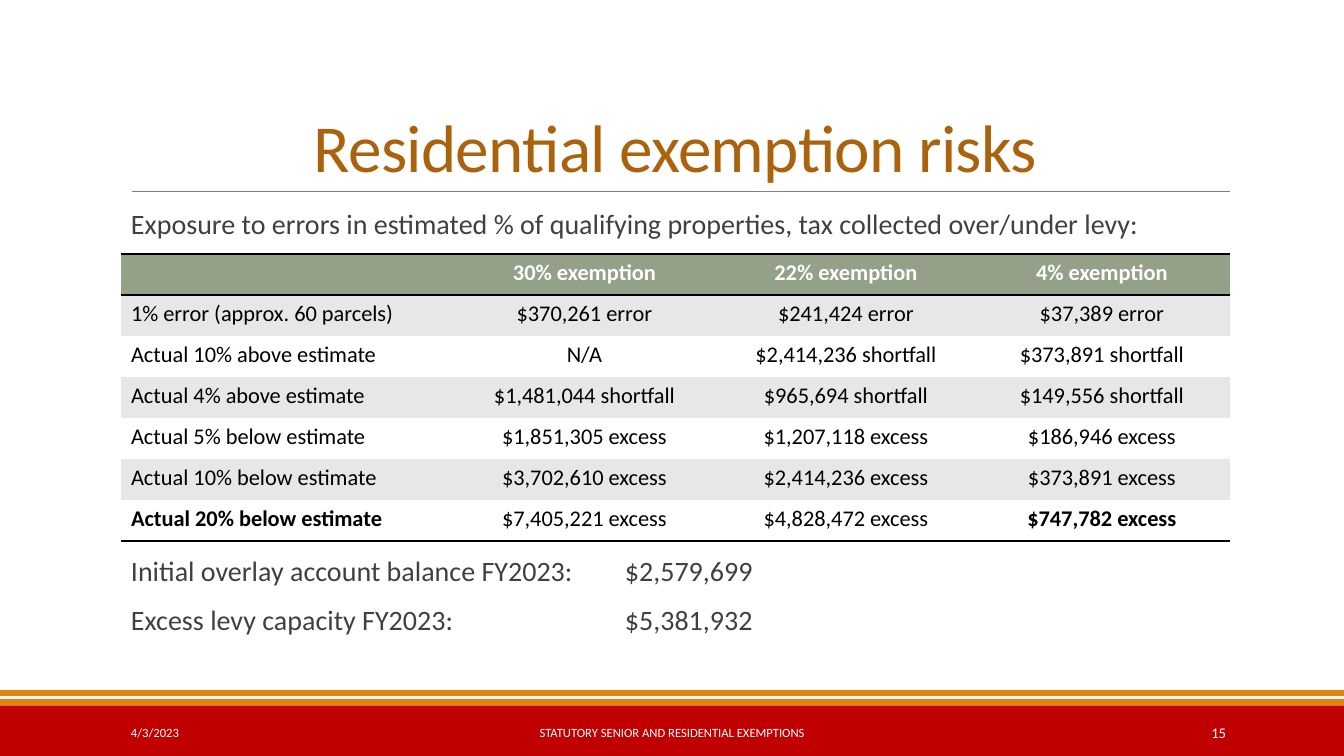
from dataclasses import dataclass

from lxml import etree
from pptx import Presentation
from pptx.dml.color import RGBColor
from pptx.enum.shapes import MSO_CONNECTOR, MSO_SHAPE
from pptx.enum.text import MSO_ANCHOR, PP_ALIGN
from pptx.oxml.ns import qn
from pptx.util import Pt

LEFT, CENTER, RIGHT = PP_ALIGN.LEFT, PP_ALIGN.CENTER, PP_ALIGN.RIGHT
MIDDLE, BOTTOM = MSO_ANCHOR.MIDDLE, MSO_ANCHOR.BOTTOM
RECTANGLE, STRAIGHT = MSO_SHAPE.RECTANGLE, MSO_CONNECTOR.STRAIGHT
EMU_PER_PX = 914400 / 100.8
PAGE_WIDTH, PAGE_HEIGHT = 1344, 756
PLAIN_TABLE_STYLE = "{2D5ABB26-0587-4C30-8999-92F81FD0307C}"


@dataclass(frozen=True)
class Theme:
    font: str = "Calibri"
    title: str = "AB620D"
    body: str = "404040"
    cell: str = "000000"
    light: str = "FFFFFF"
    header: str = "94A088"
    band: str = "E7E7E7"
    rule: str = "808080"
    red: str = "C00000"
    orange: str = "E48312"
    title_size: float = 48
    body_size: float = 20
    cell_size: float = 16
    footer_size: float = 9
    number_size: float = 10.5


THEME = Theme()

COLUMN_WIDTHS = (330, 267, 256, 256)
ROW_HEIGHT = 41
EXPOSURE = (
    ("", "30% exemption", "22% exemption", "4% exemption"),
    ("1% error (approx. 60 parcels)", "$370,261 error", "$241,424 error", "$37,389 error"),
    ("Actual 10% above estimate", "N/A", "$2,414,236 shortfall", "$373,891 shortfall"),
    ("Actual 4% above estimate", "$1,481,044 shortfall", "$965,694 shortfall", "$149,556 shortfall"),
    ("Actual 5% below estimate", "$1,851,305 excess", "$1,207,118 excess", "$186,946 excess"),
    ("Actual 10% below estimate", "$3,702,610 excess", "$2,414,236 excess", "$373,891 excess"),
    ("Actual 20% below estimate", "$7,405,221 excess", "$4,828,472 excess", "$747,782 excess"),
)
LAST_ROW = len(EXPOSURE) - 1
BOLD_CELLS = {(LAST_ROW, 0), (LAST_ROW, 3)}
BALANCES = (
    "Initial overlay account balance FY2023:\t$2,579,699",
    "Excess levy capacity FY2023:\t$5,381,932",
)


def px(length):
    return round(length * EMU_PER_PX)


def emu(box):
    return [px(length) for length in box]


def color(value):
    return RGBColor.from_string(value)


def style_para(para, size, tint, align=LEFT, bold=False):
    para.alignment = align
    for span in para.runs:
        span.font.name = THEME.font
        span.font.size = Pt(size)
        span.font.color.rgb = color(tint)
        span.font.bold = bold


def add_text(page, box, lines, size, tint, align=LEFT):
    """Add a vertically centred text box without insets."""
    frame = page.shapes.add_textbox(*emu(box)).text_frame
    frame.word_wrap = True
    frame.vertical_anchor = MIDDLE
    frame.margin_left = frame.margin_right = frame.margin_top = frame.margin_bottom = 0
    frame.text = "\n".join(lines)
    for para in frame.paragraphs:
        style_para(para, size, tint, align)
    return frame


def add_bar(page, box, tint):
    bar = page.shapes.add_shape(RECTANGLE, *emu(box))
    bar.shadow.inherit = False
    bar.fill.solid()
    bar.fill.fore_color.rgb = color(tint)
    bar.line.fill.background()


def add_title(page, box):
    left, top, width, height = box
    title = page.shapes.title
    title.left, title.top, title.width, title.height = emu(box)
    frame = title.text_frame
    frame.text = "Residential exemption risks"
    frame.word_wrap = True
    frame.vertical_anchor = BOTTOM
    para = frame.paragraphs[0]
    para.line_spacing = 0.85
    style_para(para, THEME.title_size, THEME.title, CENTER)
    para.runs[0].font._element.set("spc", "-50")

    bottom = top + height
    rule = page.shapes.add_connector(STRAIGHT, *emu((left + 11, bottom, left + width, bottom)))
    rule.line.color.rgb = color(THEME.rule)
    rule.line.width = Pt(0.5)
    etree.SubElement(rule._element.spPr, qn("a:effectLst"))


def add_cell_borders(cell, sides):
    properties = cell._tc.get_or_add_tcPr()
    for position, side in enumerate(sides):
        border = etree.Element(qn(f"a:ln{side}"), w=str(Pt(2)))
        fill = etree.SubElement(border, qn("a:solidFill"))
        etree.SubElement(fill, qn("a:srgbClr"), val=THEME.cell)
        properties.insert(position, border)


def add_exposure_table(page, box):
    frame = page.shapes.add_table(len(EXPOSURE), len(COLUMN_WIDTHS), *emu(box))
    table = frame.table
    table.horz_banding = False
    table._tbl.tblPr.find(qn("a:tableStyleId")).text = PLAIN_TABLE_STYLE
    for column, width in zip(table.columns, COLUMN_WIDTHS):
        column.width = px(width)
    for row_index, values in enumerate(EXPOSURE):
        table.rows[row_index].height = px(ROW_HEIGHT)
        is_header = row_index == 0
        shade = THEME.header if is_header else THEME.band if row_index % 2 else THEME.light
        sides = "TB" if is_header else "B" if row_index == LAST_ROW else ""
        for column_index, value in enumerate(values):
            cell = table.cell(row_index, column_index)
            cell.text = value
            cell.fill.solid()
            cell.fill.fore_color.rgb = color(shade)
            style_para(
                cell.text_frame.paragraphs[0],
                THEME.cell_size,
                THEME.light if is_header else THEME.cell,
                CENTER if column_index else LEFT,
                is_header or (row_index, column_index) in BOLD_CELLS,
            )
            add_cell_borders(cell, sides)


def add_balances(page, box):
    frame = add_text(page, box, BALANCES, THEME.body_size, THEME.body)
    frame.paragraphs[0].space_after = Pt(14)
    for para in frame.paragraphs:
        para.line_spacing = 0.9
        tabs = etree.SubElement(para._p.get_or_add_pPr(), qn("a:tabLst"))
        etree.SubElement(tabs, qn("a:tab"), pos=str(px(494)), algn="l")


def add_footer(page, box):
    left, top, width, height = box
    add_bar(page, (left, top, width, 6), THEME.orange)
    add_bar(page, (left, top + 9, width, 7), THEME.orange)
    add_bar(page, (left, top + 16, width, height - 16), THEME.red)
    labels = (
        (131, 252, "4/3/2023", THEME.footer_size, LEFT),
        (416, 512, "STATUTORY SENIOR AND RESIDENTIAL EXEMPTIONS", THEME.footer_size, CENTER),
        (1102, 124, "15", THEME.number_size, RIGHT),
    )
    for offset, label_width, label, size, align in labels:
        label_box = (left + offset, top + 23, label_width, 40)
        add_text(page, label_box, [label], size, THEME.light, align)


def main():
    deck = Presentation()
    deck.slide_width, deck.slide_height = px(PAGE_WIDTH), px(PAGE_HEIGHT)
    page = deck.slides.add_slide(deck.slide_layouts[5])
    add_footer(page, (0, 690, PAGE_WIDTH, 66))
    add_title(page, (121, 31, 1109, 160))
    intro = "Exposure to errors in estimated % of qualifying properties, tax collected over/under levy:"
    add_text(page, (131, 203, 1099, 40), [intro], THEME.body_size, THEME.body)
    add_exposure_table(page, (121, 254, sum(COLUMN_WIDTHS), ROW_HEIGHT * len(EXPOSURE)))
    add_balances(page, (131, 547, 1099, 100))
    deck.save("out.pptx")


if __name__ == "__main__":
    main()
